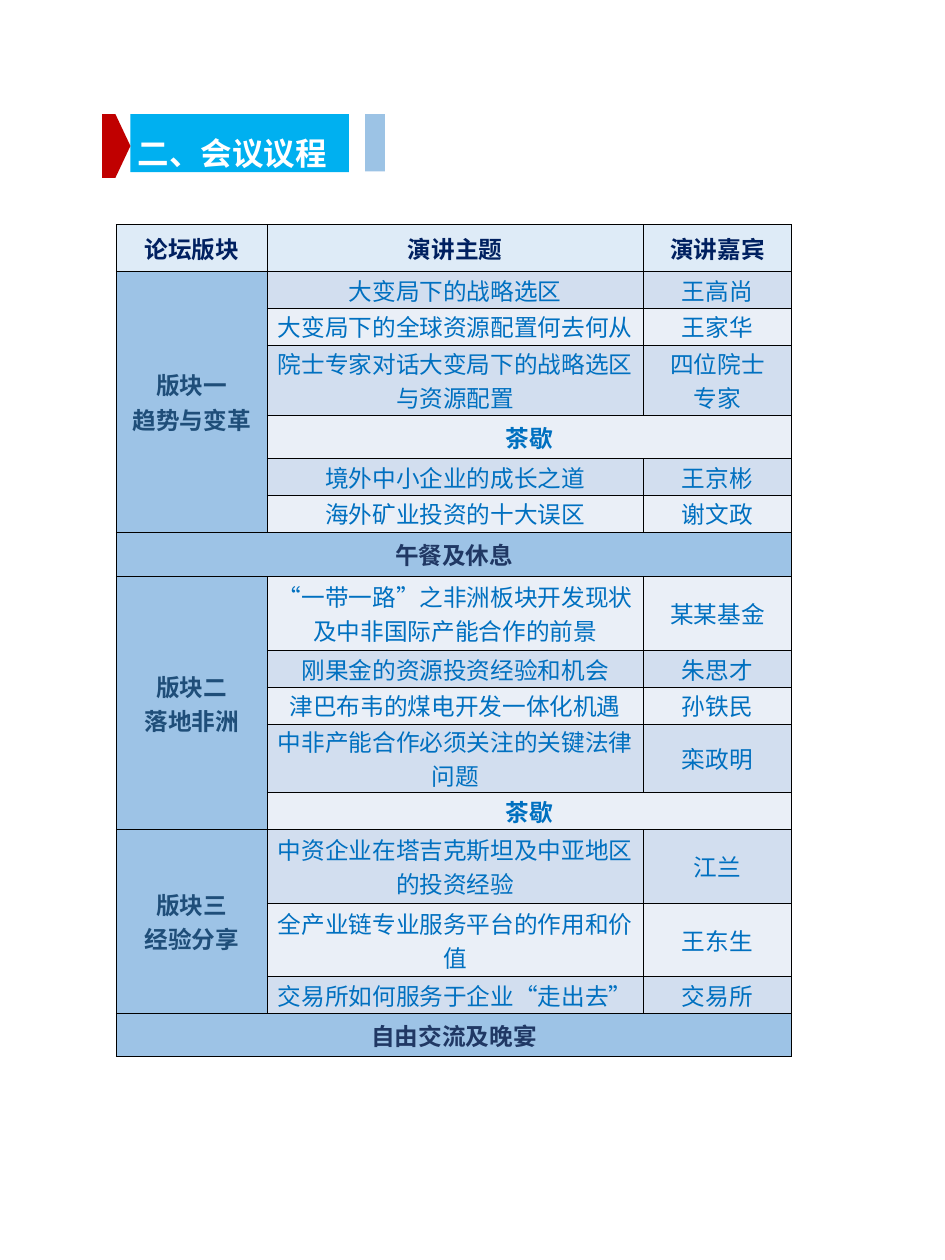
import pptx
import pptx.util
import pptx.dml.color
import pptx.enum.shapes
import pptx.enum.text
import pptx.oxml
from dataclasses import dataclass
from lxml import etree
from pptx.oxml.ns import qn

Inches = pptx.util.Inches
Shape = pptx.enum.shapes.MSO_SHAPE
Align = pptx.enum.text.PP_ALIGN
Anchor = pptx.enum.text.MSO_ANCHOR


@dataclass(frozen=True)
class Theme:
    latin: str = "Calibri"
    cjk: str = "Noto Sans CJK SC"
    title_size: int = 32
    table_size: int = 24
    white: str = "FFFFFF"
    title_fill: str = "00B0F0"
    arrow: str = "C00000"
    accent: str = "5B9BD5"
    border: str = "000000"
    header_text: str = "002060"
    header_fill: str = "DEEBF7"
    section_text: str = "1F4E79"
    section_fill: str = "9DC3E6"
    pause_text: str = "203864"
    topic_text: str = "0070C0"
    bands: tuple = ("EAEFF7", "D2DEEF")


def rgb(value):
    return pptx.dml.color.RGBColor.from_string(value)


def write_text(frame, text, *, size, color, font, cjk, bold=False,
               align=Align.CENTER, line_spacing=None, space_before=None):
    """Write each line of the text as one formatted paragraph."""
    for index, line in enumerate(text.split("\n")):
        paragraph = frame.add_paragraph() if index else frame.paragraphs[0]
        paragraph.alignment = align
        if line_spacing:
            paragraph.line_spacing = line_spacing
        if space_before:
            paragraph.space_before = pptx.util.Pt(space_before)
        run = paragraph.add_run()
        run.text = line
        run.font.size = pptx.util.Pt(size)
        run.font.bold = bold
        run.font.color.rgb = rgb(color)
        run.font.name = font
        east_asian = etree.SubElement(run.font._element, qn("a:ea"))
        east_asian.set("typeface", cjk)


class AgendaSlide:
    def __init__(self, deck, theme):
        self.theme = theme
        self.slide = deck.slides.add_slide(deck.slide_layouts[5])

    def title(self, text, left, top, width, height):
        theme = self.theme
        heading = self.slide.shapes.title
        heading.left, heading.top = Inches(left), Inches(top)
        heading.width, heading.height = Inches(width), Inches(height)
        heading.fill.solid()
        heading.fill.fore_color.rgb = rgb(theme.title_fill)
        frame = heading.text_frame
        frame.word_wrap = True
        frame.auto_size = pptx.enum.text.MSO_AUTO_SIZE.NONE
        frame.vertical_anchor = Anchor.MIDDLE
        write_text(frame, text, size=theme.title_size, color=theme.white,
                   font=theme.latin, cjk=theme.cjk, bold=True,
                   align=Align.JUSTIFY, line_spacing=1.5, space_before=6)

    def ornament(self, kind, left, top, width, height, color, opacity=None):
        mark = self.slide.shapes.add_shape(
            kind, Inches(left), Inches(top), Inches(width), Inches(height))
        mark.shadow.inherit = False
        mark.line.fill.background()
        mark.fill.solid()
        mark.fill.fore_color.rgb = rgb(color)
        if opacity:
            tint = mark.fill._xPr.find(qn("a:solidFill"))[0]
            etree.SubElement(tint, qn("a:alpha")).set("val", str(opacity * 1000))
        return mark

    def table(self, left, top, widths, heights):
        grid = self.slide.shapes.add_table(
            len(heights), len(widths), Inches(left), Inches(top),
            Inches(sum(widths)), Inches(sum(heights))).table
        for column, width in zip(grid.columns, widths):
            column.width = Inches(width)
        for row, height in zip(grid.rows, heights):
            row.height = Inches(height)
        for cell in grid.iter_cells():
            self.borders(cell)
        return grid

    def borders(self, cell):
        properties = cell._tc.get_or_add_tcPr()
        for side in ("a:lnL", "a:lnR", "a:lnT", "a:lnB"):
            line = etree.SubElement(properties, qn(side), w="12700")
            fill = etree.SubElement(line, qn("a:solidFill"))
            etree.SubElement(fill, qn("a:srgbClr"), val=self.theme.border)

    def cell(self, grid, row, column, text, fill, color, bold=False, rows=1, columns=1):
        theme = self.theme
        cell = grid.cell(row, column)
        for r in range(row, row + rows):
            for c in range(column, column + columns):
                part = grid.cell(r, c)
                part.fill.solid()
                part.fill.fore_color.rgb = rgb(fill)
        if rows * columns > 1:
            cell.merge(grid.cell(row + rows - 1, column + columns - 1))
        cell.vertical_anchor = Anchor.MIDDLE
        cell.margin_left = cell.margin_right = Inches(0.07)
        cell.margin_top = cell.margin_bottom = 0
        write_text(cell.text_frame, text, size=theme.table_size, color=color,
                   font=theme.cjk, cjk=theme.cjk, bold=bold)

    def agenda(self, left, top, widths, header, header_height, blocks):
        theme = self.theme
        heights = [header_height] + [talk[0] for _, talks in blocks for talk in talks]
        grid = self.table(left, top, widths, heights)
        for column, label in enumerate(header):
            self.cell(grid, 0, column, label, theme.header_fill, theme.header_text, True)
        row = 1
        for section, talks in blocks:
            if section is None:  # pause across the whole table
                self.cell(grid, row, 0, talks[0][1], theme.section_fill,
                          theme.pause_text, True, columns=len(widths))
                row += 1
                continue
            self.cell(grid, row, 0, section, theme.section_fill,
                      theme.section_text, True, rows=len(talks))
            for _, topic, speaker in talks:
                band = theme.bands[row % 2]
                if speaker:
                    self.cell(grid, row, 1, topic, band, theme.topic_text)
                    self.cell(grid, row, 2, speaker, band, theme.topic_text)
                else:
                    self.cell(grid, row, 1, topic, band, theme.topic_text, True, columns=2)
                row += 1


# Agenda content: section, then height, topic and speaker of each row
LINE, TALL = 0.52, 1.04
BLOCKS = [
    ("版块一\n趋势与变革", [
        (LINE, "大变局下的战略选区", "王高尚"),
        (LINE, "大变局下的全球资源配置何去何从", "王家华"),
        (0.99, "院士专家对话大变局下的战略选区与资源配置", "四位院士\n专家"),
        (0.61, "茶歇", None),
        (LINE, "境外中小企业的成长之道", "王京彬"),
        (LINE, "海外矿业投资的十大误区", "谢文政")]),
    (None, [(0.63, "午餐及休息", None)]),
    ("版块二\n落地非洲", [
        (TALL, "“一带一路”之非洲板块开发现状及中非国际产能合作的前景", "某某基金"),
        (LINE, "刚果金的资源投资经验和机会", "朱思才"),
        (LINE, "津巴布韦的煤电开发一体化机遇", "孙铁民"),
        (LINE, "中非产能合作必须关注的关键法律问题", "栾政明"),
        (LINE, "茶歇", None)]),
    ("版块三\n经验分享", [
        (TALL, "中资企业在塔吉克斯坦及中亚地区的投资经验", "江兰"),
        (TALL, "全产业链专业服务平台的作用和价值", "王东生"),
        (LINE, "交易所如何服务于企业“走出去”", "交易所")]),
    (None, [(0.6, "自由交流及晚宴", None)]),
]


def main():
    deck = pptx.Presentation()
    deck.slide_width, deck.slide_height = Inches(13.33), Inches(17.78)
    theme = Theme()
    page = AgendaSlide(deck, theme)

    # Agenda table
    page.agenda(1.64, 3.17, (2.13, 5.3, 2.1),
                ("论坛版块", "演讲主题", "演讲嘉宾"), 0.66, BLOCKS)

    # Heading banner
    page.ornament(Shape.RECTANGLE, 5.15, 1.61, 0.28, 0.81, theme.accent, opacity=60)
    pointer = page.ornament(Shape.PENTAGON, 1.44, 1.61, 0.4, 0.9, theme.arrow)
    pointer.adjustments[0] = 0.53
    page.title("二、会议议程", 1.84, 1.61, 3.08, 0.82)

    deck.save("out.pptx")


if __name__ == "__main__":
    main()
